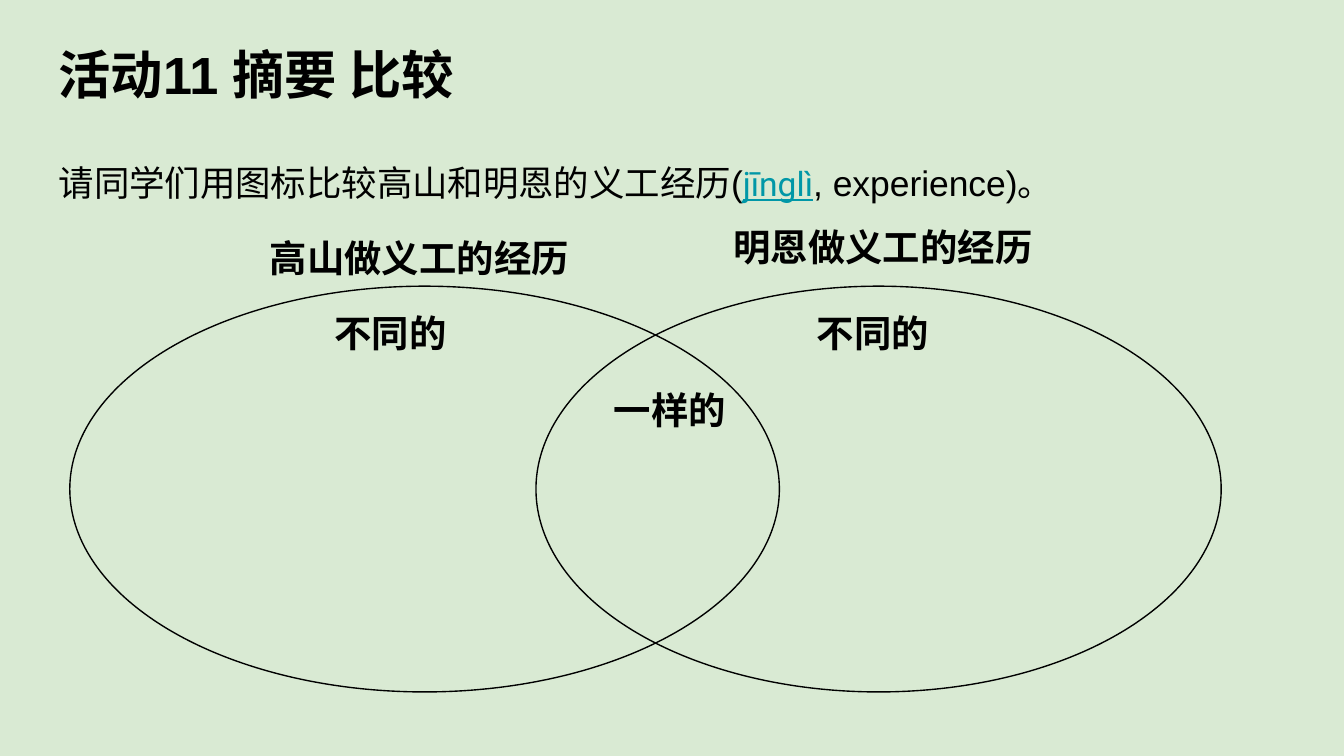
import pptx
import pptx.dml.color
import pptx.enum.shapes
import pptx.enum.text
import pptx.util

Cm = pptx.util.Cm
Pt = pptx.util.Pt
BLACK = "000000"


def color(value):
    return pptx.dml.color.RGBColor.from_string(value)


class Page:
    """Holds the style and the slide being filled."""

    font = "Arial"
    inset = Cm(0.25)

    def __init__(self, deck, background):
        self.slide = deck.slides.add_slide(deck.slide_layouts[5])
        self.slide.background.fill.solid()
        self.slide.background.fill.fore_color.rgb = color(background)

    def place(self, box, left, top, width, height):
        box.left, box.top, box.width, box.height = map(Cm, (left, top, width, height))

    def style(self, span, size, bold=False, font=font, ink=BLACK, underline=False):
        span.font.size = Pt(size)
        span.font.bold = bold
        span.font.name = font
        span.font.color.rgb = color(ink)
        span.font.underline = underline

    def prepare(self, box, spacing):
        """Set insets, wrapping and alignment; return the first paragraph."""
        frame = box.text_frame
        frame.margin_left = frame.margin_right = self.inset
        frame.margin_top = frame.margin_bottom = self.inset
        frame.word_wrap = True
        frame.auto_size = pptx.enum.text.MSO_AUTO_SIZE.NONE
        frame.vertical_anchor = pptx.enum.text.MSO_ANCHOR.TOP
        para = frame.paragraphs[0]
        para.alignment = pptx.enum.text.PP_ALIGN.LEFT
        para.line_spacing = spacing
        return para

    def title(self, text, *bounds):
        box = self.slide.shapes.title
        self.place(box, *bounds)
        box.text_frame.text = text
        para = self.prepare(box, 1.15)
        self.style(para.runs[0], 28, bold=True)

    def text(self, spans, *bounds, spacing=1.0):
        """Add a text box from pairs of text and style."""
        box = self.slide.shapes.add_textbox(*map(Cm, bounds))
        para = self.prepare(box, spacing)
        for words, look in spans:
            span = para.add_run()
            span.text = words
            self.style(span, **look)

    def label(self, words, left, top, width):
        self.text([(words, {"size": 20, "bold": True})], left, top, width, 0.97)

    def ellipse(self, *bounds):
        oval = self.slide.shapes.add_shape(
            pptx.enum.shapes.MSO_SHAPE.OVAL, *map(Cm, bounds))
        oval.shadow.inherit = False
        oval.fill.background()
        oval.line.color.rgb = color(BLACK)
        oval.line.width = Pt(0.75)


def main():
    deck = pptx.Presentation()
    deck.slide_width, deck.slide_height = Cm(25.4), Cm(14.29)
    page = Page(deck, "D9EAD3")

    page.title("活动11 摘要 比较", 0.86, 0.38, 23.67, 2.0)
    plain = {"size": 19}
    pinyin = {"size": 18, "font": "Roboto", "ink": "0097A7", "underline": True}
    page.text([("请同学们用图标比较高山和明恩的义工经历(", plain),
               ("jīnglì", pinyin),
               (", experience)。", plain)],
              0.86, 2.68, 23.67, 1.4, spacing=1.15)

    for left, width in ((1.32, 13.41), (10.13, 12.95)):
        page.ellipse(left, 5.41, width, 7.67)

    for words, left, top, width in (
            ("高山做义工的经历", 4.85, 4.19, 6.93),
            ("明恩做义工的经历", 13.61, 3.99, 7.16),
            ("不同的", 6.07, 5.61, 4.06),
            ("不同的", 15.19, 5.61, 4.06),
            ("一样的", 11.35, 7.06, 4.06)):
        page.label(words, left, top, width)

    deck.save("out.pptx")


if __name__ == "__main__":
    main()
